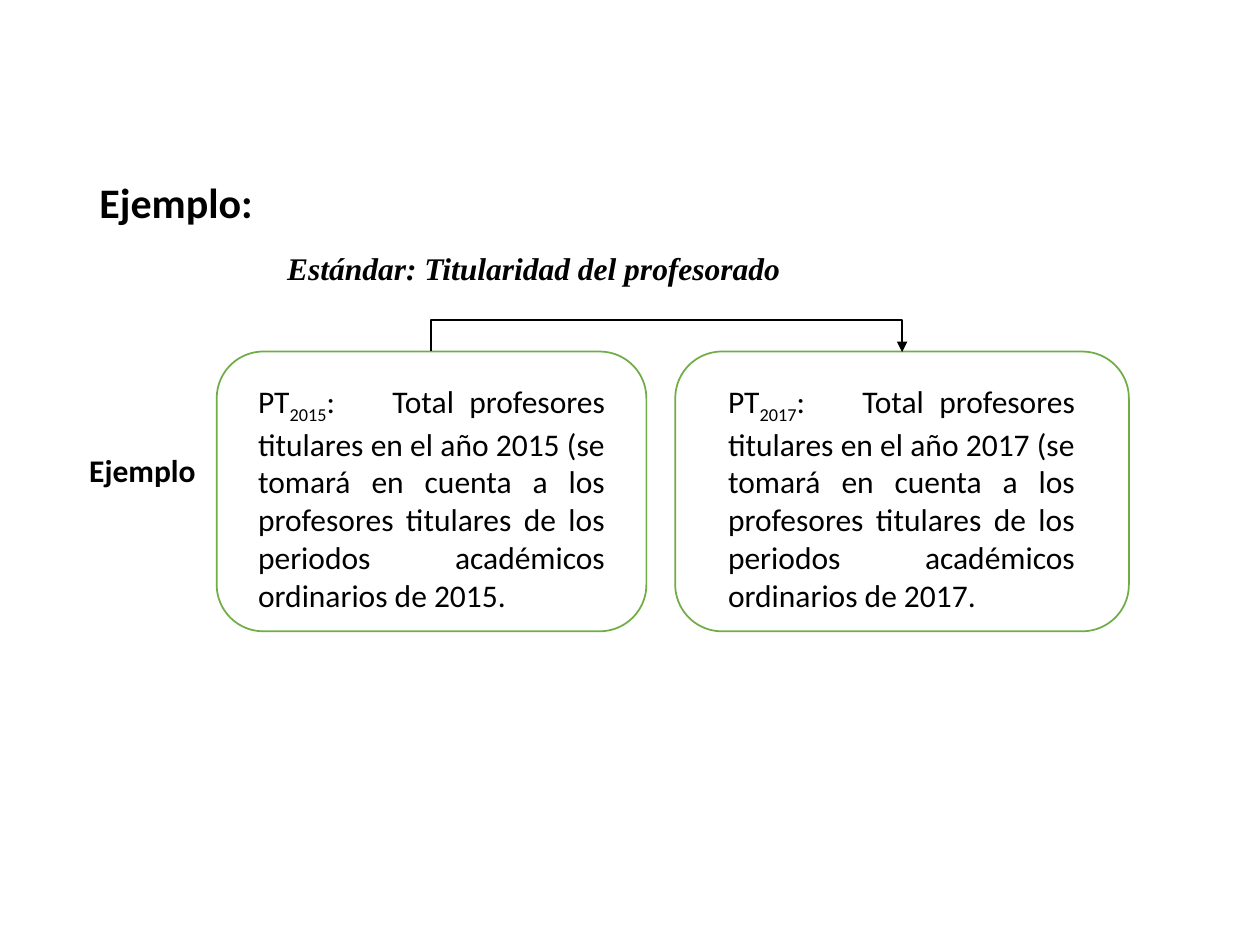
import pptx
import pptx.util
import pptx.dml.color
import pptx.enum.dml
import pptx.enum.shapes
import pptx.enum.text
import pptx.oxml
import pptx.oxml.ns
from pptx.util import Inches

BLACK = pptx.dml.color.RGBColor(0x00, 0x00, 0x00)
GREEN = pptx.dml.color.RGBColor(0x70, 0xAD, 0x47)
qn = pptx.oxml.ns.qn


class SlideBuilder:
    font = "Calibri"
    size = 18

    def __init__(self, slide):
        self.s = slide

    def style(self, r, size=None, font=None, bold=False, italic=False):
        f = r.font
        f.name = font or self.font
        f.size = pptx.util.Pt(size or self.size)
        f.bold, f.italic = bold, italic
        f.color.rgb = BLACK

    def textbox(self, x, y, w, h, wrap=True):
        sp = self.s.shapes.add_textbox(Inches(x), Inches(y), Inches(w), Inches(h))
        sp.text_frame.word_wrap = wrap
        return sp.text_frame

    def label(self, text, x, y, w, h, wrap=True, **style):
        tf = self.textbox(x, y, w, h, wrap)
        tf.text = text
        self.style(tf.paragraphs[0].runs[0], bold=True, **style)
        return tf

    def definition(self, year, x, y, w, h):
        p = self.textbox(x, y, w, h).paragraphs[0]
        p.alignment = pptx.enum.text.PP_ALIGN.JUSTIFY
        body = (f": \tTotal profesores titulares en el año {year} (se tomará en "
                "cuenta a los profesores titulares de los periodos académicos "
                f"ordinarios de {year}.")
        for text in ("PT", year, body):
            r = p.add_run()
            r.text = text
            self.style(r)
        p.runs[1].font._element.set("baseline", "-25000")

    def frame(self, x, y, w, h):
        sp = self.s.shapes.add_shape(
            pptx.enum.shapes.MSO_SHAPE.ROUNDED_RECTANGLE,
            Inches(x), Inches(y), Inches(w), Inches(h))
        sp.shadow.inherit = False
        sp.fill.background()
        sp.line.color.rgb = GREEN
        sp.line.width = pptx.util.Pt(1)

    def bracket_arrow(self, x1, x2, y, rise):
        """Elbow arrow from (x1, y) to (x2, y), passing above by rise."""
        # A thin upright elbow, turned by 270 degrees about its centre
        mid, half, thin = (x1 + x2) / 2, (x2 - x1) / 2, 0.01
        cx = self.s.shapes.add_connector(
            pptx.enum.shapes.MSO_CONNECTOR.ELBOW,
            Inches(mid + thin / 2), Inches(y - half),
            Inches(mid - thin / 2), Inches(y + half))
        cx.line.color.rgb = BLACK
        cx.line.width = pptx.util.Pt(1.5)
        pr = cx._element.spPr
        pr.find(qn("a:xfrm")).set("rot", str(270 * 60000))
        guide = pptx.oxml.parse_xml(
            f'<a:gd {pptx.oxml.ns.nsdecls("a")} name="adj1" '
            f'fmla="val {round(-rise / thin * 100000)}"/>')
        pr.find(qn("a:prstGeom")).get_or_add_avLst().append(guide)
        tail = pr.find(qn("a:ln")).makeelement(qn("a:tailEnd"), {"type": "triangle"})
        pr.find(qn("a:ln")).append(tail)
        pr.append(pr.makeelement(qn("a:effectLst"), {}))


def main():
    prs = pptx.Presentation()
    prs.slide_width, prs.slide_height = Inches(10), Inches(7.5)
    b = SlideBuilder(prs.slides.add_slide(prs.slide_layouts[6]))

    # Headings and side label
    tf = b.label("Ejemplo:", 0.69, 1.31, 8.62, 0.64, size=24)
    tf.vertical_anchor = pptx.enum.text.MSO_ANCHOR.MIDDLE
    tf.paragraphs[0].line_spacing = 0.9
    b.label("Estándar: Titularidad del profesorado", 2.18, 1.93, 7.05, 0.4,
            font="Times New Roman", italic=True)
    b.label("Ejemplo", 0.61, 3.53, 1.11, 0.4, wrap=False)

    # Framed definitions, one for each year
    top = 2.79
    for year, frame_x, frame_w, text_x in (("2015", 1.72, 3.41, 1.95),
                                           ("2017", 5.36, 3.6, 5.68)):
        b.frame(frame_x, top, frame_w, 2.22)
        b.definition(year, text_x, 2.98, 2.95, 1.92)

    # Arrow from the first year to the second
    b.bracket_arrow(3.42, 7.16, top, 0.25)

    prs.save("out.pptx")


if __name__ == "__main__":
    main()
